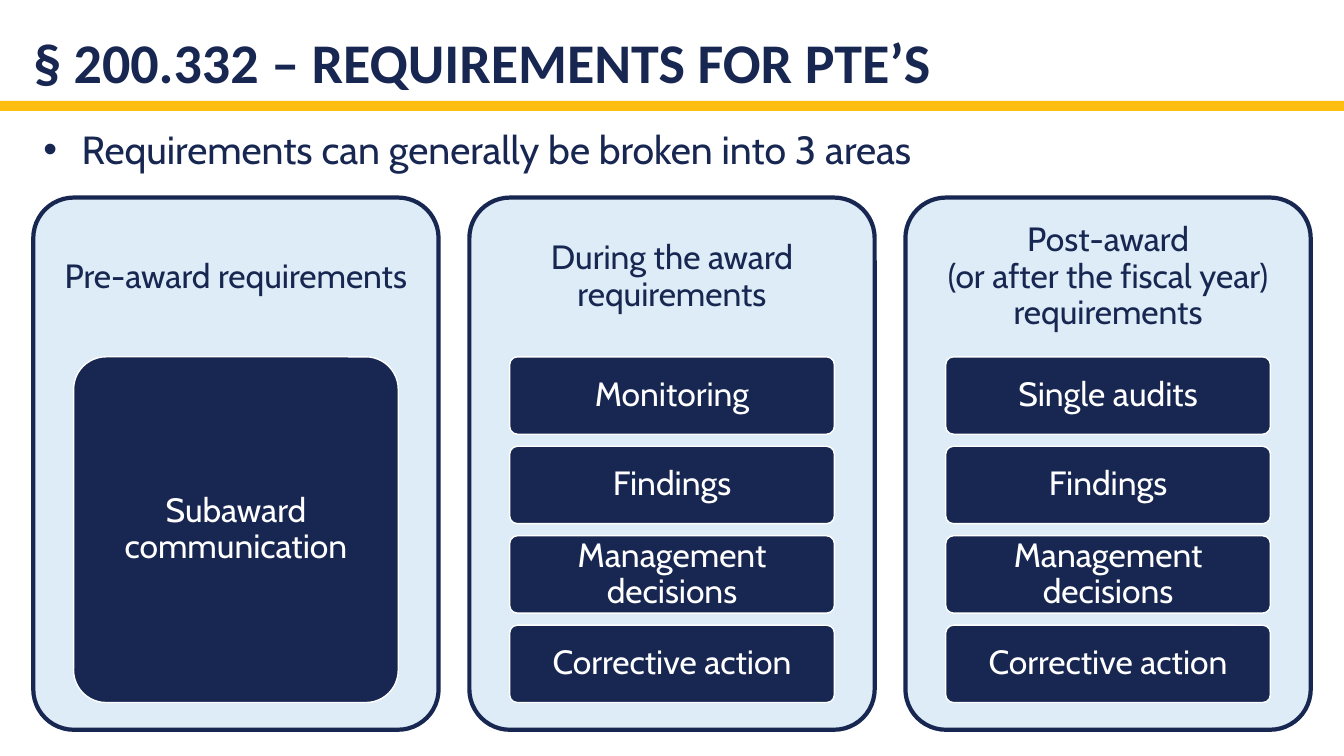
"""Build the slide on requirements for PTE's as three panels of stacked boxes."""
import pptx
import pptx.dml.color
import pptx.enum.shapes
import pptx.enum.text
import pptx.oxml.ns
import pptx.util
from lxml import etree

Inches, Pt = pptx.util.Inches, pptx.util.Pt
SHAPE = pptx.enum.shapes.MSO_SHAPE
ALIGN = pptx.enum.text.PP_ALIGN
ANCHOR = pptx.enum.text.MSO_ANCHOR

TITLE = "§ 200.332 – REQUIREMENTS FOR PTE’S"
BULLET = "Requirements can generally be broken into 3 areas"
PANELS = [
    (["Pre-award requirements"], ["Subaward communication"]),
    (["During the award requirements"],
     ["Monitoring", "Findings", "Management decisions", "Corrective action"]),
    (["Post-award", "(or after the fiscal year) requirements"],
     ["Single audits", "Findings", "Management decisions", "Corrective action"]),
]
NAVY, GOLD, PALE, WHITE = "182751", "FEBD11", "DDECF6", "FFFFFF"

LEFT, WIDTH = 0.33, 12.67
PANEL_TOP, PANEL_W, PANEL_H = 1.96, 4.02, 5.28
BOX_TOP, BOX_W, STACK_H, BOX_GAP = 3.54, 3.22, 3.43, 0.12


def rgb(color):
    return pptx.dml.color.RGBColor.from_string(color)


def place(sp, x, y, w, h):
    sp.left, sp.top, sp.width, sp.height = map(Inches, (x, y, w, h))


def set_frame(tf, insets, anchor):
    tf.word_wrap = True
    tf.vertical_anchor = anchor
    tf.margin_left, tf.margin_top, tf.margin_right, tf.margin_bottom = map(Inches, insets)


def add_run(p, text, size, color, font="Cabin", bold=False):
    r = p.add_run()
    r.text = text
    r.font.name, r.font.size, r.font.bold = font, Pt(size), bold
    r.font.color.rgb = rgb(color)


def add_box(s, kind, at, fill, line=None, line_pt=1):
    sp = s.shapes.add_shape(kind, *map(Inches, at))
    sp.shadow.inherit = False
    sp.fill.solid()
    sp.fill.fore_color.rgb = rgb(fill)
    if line:
        sp.line.color.rgb = rgb(line)
        sp.line.width = Pt(line_pt)
    else:
        sp.line.fill.background()
    return sp


def add_label_box(s, at, fill, line, line_pt, lines, color, insets):
    sp = add_box(s, SHAPE.ROUNDED_RECTANGLE, at, fill, line, line_pt)
    sp.adjustments[0] = 0.1
    set_frame(sp.text_frame, insets, ANCHOR.MIDDLE)
    p = sp.text_frame.paragraphs[0]
    p.alignment, p.line_spacing = ALIGN.CENTER, 0.9
    for i, text in enumerate(lines):
        if i:
            p.add_line_break()
        add_run(p, text, 24, color)


def add_title(s):
    sp = s.shapes.title
    place(sp, LEFT, 0, WIDTH, 1)
    set_frame(sp.text_frame, (0, 0.05, 0, 0.05), ANCHOR.BOTTOM)
    p = sp.text_frame.paragraphs[0]
    p.alignment, p.line_spacing = ALIGN.LEFT, 0.9
    add_run(p, TITLE, 40, NAVY, "Calibri", True)


def add_bullet(s):
    sp = s.placeholders[1]
    place(sp, LEFT, 1.19, WIDTH, 0.57)
    set_frame(sp.text_frame, (0.1, 0.05, 0.1, 0.05), ANCHOR.TOP)
    p = sp.text_frame.paragraphs[0]
    pPr = p._p.get_or_add_pPr()
    pPr.set("marL", str(Inches(0.38)))
    pPr.set("indent", str(-Inches(0.38)))
    etree.SubElement(pPr, pptx.oxml.ns.qn("a:buChar")).set("char", "•")
    p.space_before = Pt(0)
    add_run(p, BULLET, 28, NAVY)


def add_panels(s):
    pitch = (WIDTH - PANEL_W) / (len(PANELS) - 1)
    for col, (heading, items) in enumerate(PANELS):
        x = LEFT + col * pitch
        add_label_box(s, (x, PANEL_TOP, PANEL_W, PANEL_H), PALE, NAVY, 3,
                      heading, NAVY, (0, 0, 0, PANEL_H - 1.58))
        box_x = x + (PANEL_W - BOX_W) / 2
        box_h = (STACK_H + BOX_GAP) / len(items) - BOX_GAP
        for row, item in enumerate(items):
            y = BOX_TOP + row * (box_h + BOX_GAP)
            add_label_box(s, (box_x, y, BOX_W, box_h), NAVY, WHITE, 1,
                          [item], WHITE, (0.07, 0, 0.07, 0))


def main():
    prs = pptx.Presentation()
    prs.slide_width, prs.slide_height = Inches(13.33), Inches(7.5)
    s = prs.slides.add_slide(prs.slide_layouts[1])
    add_box(s, SHAPE.RECTANGLE, (0, 1, 13.33, 0.1), GOLD)
    add_title(s)
    add_bullet(s)
    add_panels(s)
    prs.save("out.pptx")


if __name__ == "__main__":
    main()
